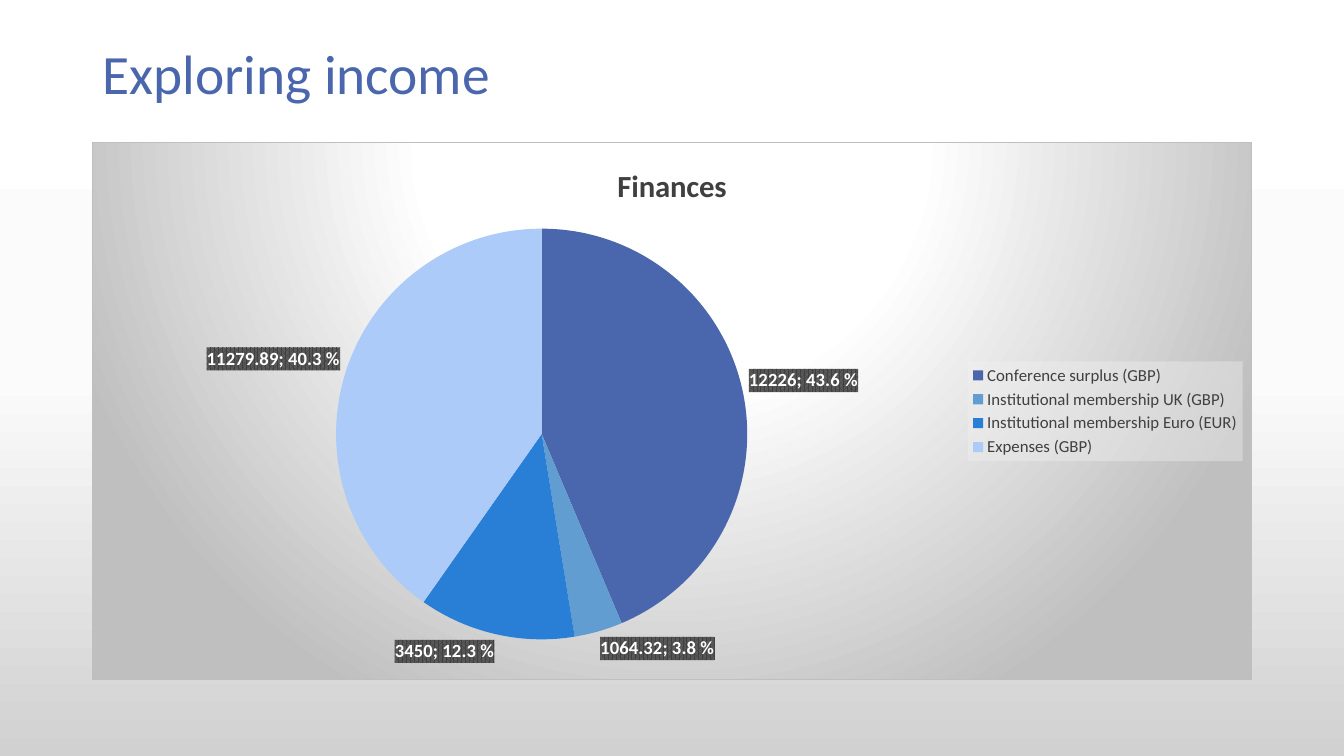
from lxml.etree import SubElement
from pptx import Presentation
from pptx.chart.data import CategoryChartData
from pptx.dml.color import RGBColor
from pptx.enum.chart import XL_CHART_TYPE, XL_LABEL_POSITION, XL_LEGEND_POSITION
from pptx.enum.text import MSO_ANCHOR
from pptx.oxml import parse_xml
from pptx.oxml.ns import nsdecls, qn
from pptx.util import Pt

FACE = "Calibri"
BLUE, WHITE, DARK, GREY = "4A66AC", "FFFFFF", "404040", "BFBFBF"
INCOME = [
    ("Conference surplus (GBP)", 12226, BLUE),
    ("Institutional membership UK (GBP)", 1064.32, "629DD1"),
    ("Institutional membership Euro (EUR)", 3450, "297FD5"),
    ("Expenses (GBP)", 11279.89, "ACCBF9"),
]


def color(code):
    return RGBColor.from_string(code)


def style(font, size, code, bold=False):
    font.name, font.size, font.bold = FACE, Pt(size), bold
    font.color.rgb = color(code)


def solid(code, alpha=100):
    return (f'<a:solidFill><a:srgbClr val="{code}">'
            f'<a:alpha val="{alpha * 1000}"/></a:srgbClr></a:solidFill>')


def grad(stops, shade):
    marks = "".join(f'<a:gs pos="{pos * 1000}"><a:srgbClr val="{code}"/></a:gs>'
                    for pos, code in stops)
    return (f'<a:gradFill {nsdecls("a")} rotWithShape="1">'
            f'<a:gsLst>{marks}</a:gsLst>{shade}</a:gradFill>')


def look(body):
    return parse_xml(f'<c:spPr {nsdecls("c", "a")}>{body}</c:spPr>')


def add_back(slide):
    fill = slide.background.fill
    fill.solid()
    old = slide.element.find(".//" + qn("a:solidFill"))
    stops = [(0, WHITE), (50, "FBFBFB"), (100, "D1D1D1")]
    shade = '<a:lin ang="5400000" scaled="0"/>'
    old.getparent().replace(old, parse_xml(grad(stops, shade)))


def add_title(slide, text):
    frame = slide.shapes.add_textbox(Pt(66), Pt(29), Pt(828), Pt(52)).text_frame
    frame.word_wrap = True
    frame.vertical_anchor = MSO_ANCHOR.MIDDLE
    line = frame.paragraphs[0]
    line.text = text
    line.line_spacing = 0.9
    style(line.font, 39.6, BLUE)


def add_pie(slide, name, rows):
    data = CategoryChartData()
    data.categories = [row[0] for row in rows]
    data.add_series(name, [row[1] for row in rows])
    chart = slide.shapes.add_chart(
        XL_CHART_TYPE.PIE, Pt(66), Pt(101.5), Pt(828), Pt(384.5), data).chart
    style(chart.font, 10, "000000")
    chart.has_title = True
    head = chart.chart_title.text_frame
    head.text = name
    style(head.paragraphs[0].font, 22, DARK, True)

    # Slices
    plot = chart.plots[0]
    plot.vary_by_categories = True
    series = plot.series[0]
    for i, row in enumerate(rows):
        fill = series.points[i].format.fill
        fill.solid()
        fill.fore_color.rgb = color(row[2])
    set_area(chart)
    set_labels(series.data_labels)
    set_legend(chart)


def set_area(chart):
    # Radial backdrop with a thin border
    shade = ('<a:path path="circle"><a:fillToRect l="50000" t="-80000" '
             'r="50000" b="180000"/></a:path>')
    stops = [(0, WHITE), (39, WHITE), (100, GREY)]
    body = grad(stops, shade) + f'<a:ln w="9525">{solid(GREY)}</a:ln>'
    root = chart.element if hasattr(chart, "element") else chart._chartSpace
    root.find(qn("c:chart")).addnext(look(body))

    # Place of the pie
    area = root.find(".//" + qn("c:plotArea"))
    for old in area.findall(qn("c:layout")):
        area.remove(old)
    spot = parse_xml(f'<c:layout {nsdecls("c")}><c:manualLayout/></c:layout>')
    area.insert(0, spot)
    for tag, val in [("layoutTarget", "inner"), ("xMode", "edge"),
                     ("yMode", "edge"), ("x", 0.21), ("y", 0.16),
                     ("w", 0.355), ("h", 0.765)]:
        SubElement(spot[0], qn("c:" + tag)).set("val", str(val))


def set_labels(labels):
    labels.show_value = labels.show_percentage = True
    labels.number_format = "0.0\\ %"
    labels.number_format_is_linked = False
    labels.position = XL_LABEL_POSITION.OUTSIDE_END
    style(labels.font, 13.3, WHITE, True)
    root = labels._element
    root.find(qn("c:txPr")).addprevious(look(
        f'<a:pattFill prst="pct75"><a:fgClr><a:srgbClr val="{DARK}"/></a:fgClr>'
        '<a:bgClr><a:srgbClr val="595959"/></a:bgClr></a:pattFill>'))
    flags = [kid for kid in root if kid.tag.rpartition("}")[2].startswith("show")
             and kid.tag != qn("c:showLeaderLines")]
    flags[-1].addnext(parse_xml(
        f'<c:separator {nsdecls("c")}>; </c:separator>'))


def set_legend(chart):
    chart.has_legend = True
    legend = chart.legend
    legend.position = XL_LEGEND_POSITION.RIGHT
    legend.include_in_layout = False
    style(legend.font, 12, DARK)
    legend._element.find(qn("c:txPr")).addprevious(look(solid("F2F2F2", 39)))


def main():
    deck = Presentation()
    deck.slide_width, deck.slide_height = Pt(960), Pt(540)
    slide = deck.slides.add_slide(deck.slide_layouts[6])
    add_back(slide)
    add_title(slide, "Exploring income")
    add_pie(slide, "Finances", INCOME)
    deck.save("out.pptx")


if __name__ == "__main__":
    main()
